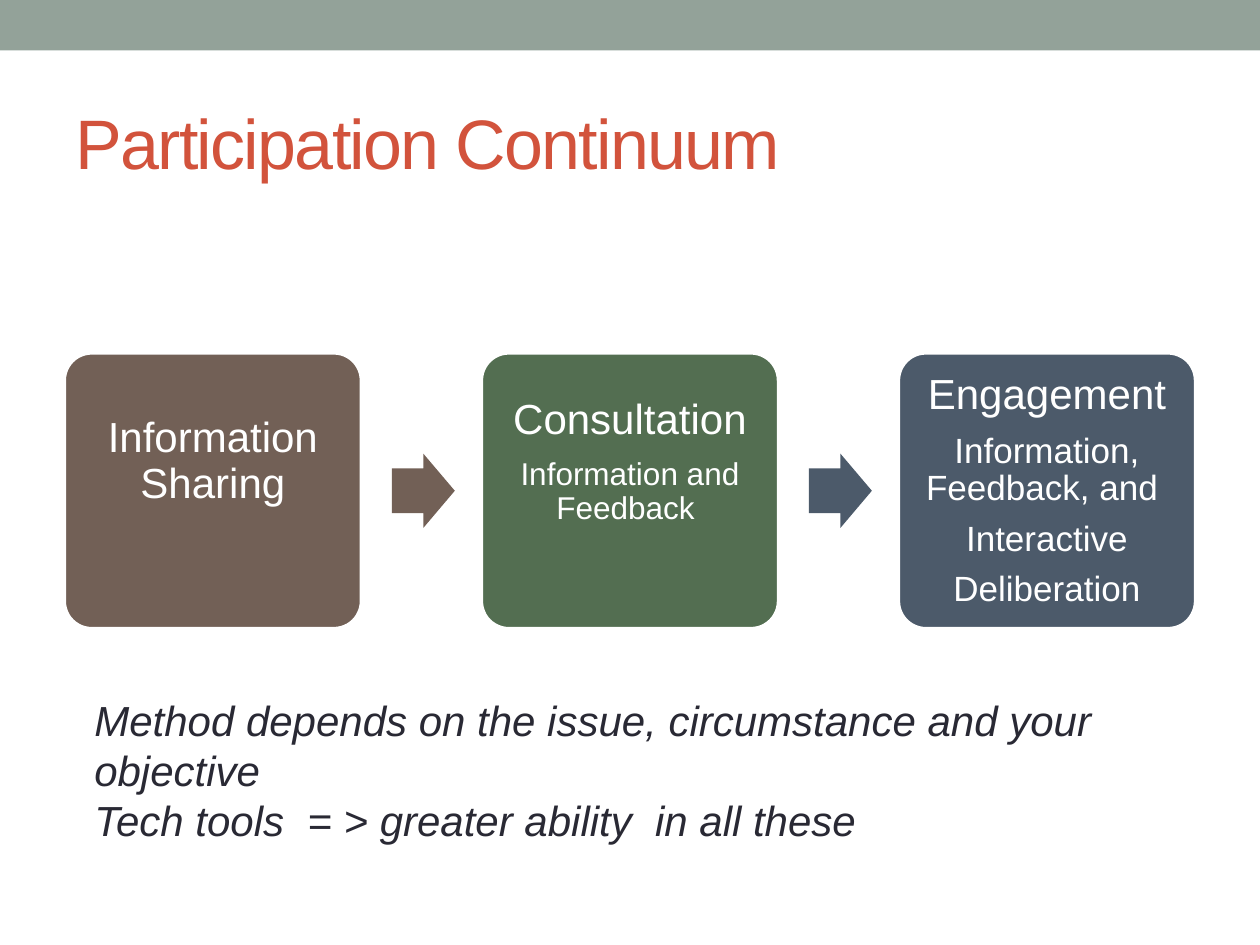
from pptx import Presentation
from pptx.dml.color import RGBColor
from pptx.enum.shapes import MSO_SHAPE
from pptx.enum.text import MSO_ANCHOR, MSO_AUTO_SIZE, PP_ALIGN
from pptx.util import Inches, Pt

RECT, BOX, ARROW = MSO_SHAPE.RECTANGLE, MSO_SHAPE.ROUNDED_RECTANGLE, MSO_SHAPE.RIGHT_ARROW
MIDDLE, LEFT, CENTER = MSO_ANCHOR.MIDDLE, PP_ALIGN.LEFT, PP_ALIGN.CENTER
FONT = "Arial"
COLORS = {"band": "93A299", "title": "D2533C", "text": "292934", "white": "FFFFFF",
          "brown": "726056", "green": "536E51", "blue": "4C5A6A"}

# Content
TITLE = "Participation Continuum"
# colour, bottom inset, lines of (text, size)
STEPS = [
    ("brown", 0.56, [("Information Sharing", 24)]),
    ("green", 0.56, [("Consultation", 24), ("Information and Feedback ", 18)]),
    ("blue", 0.1, [("Engagement", 24), ("Information, Feedback, and ", 20),
                   ("Interactive", 20), ("Deliberation", 20)]),
]
ARROW_COLORS = ["brown", "blue"]
NOTES = ["Method depends on the issue, circumstance and your objective",
         "Tech tools  = > greater ability  in all these"]

# Layout in inches
BOX_LEFT, BOX_TOP, BOX_W, BOX_H, PITCH = 0.51, 2.8, 2.36, 2.19, 3.31
ARROW_OFFSET, ARROW_W, ARROW_H = 2.6, 0.5, 0.59


def rgb(name):
    return RGBColor.from_string(COLORS[name])


def add_block(s, kind, x, y, w, h, color):
    sp = s.shapes.add_shape(kind, Inches(x), Inches(y), Inches(w), Inches(h))
    sp.shadow.inherit = False
    sp.fill.solid()
    sp.fill.fore_color.rgb = rgb(color)
    sp.line.fill.background()
    return sp


def add_lines(tf, lines, color, align):
    for i, (text, size) in enumerate(lines):
        p = tf.add_paragraph() if i else tf.paragraphs[0]
        p.text = text
        p.alignment = align
        p.font.name, p.font.size = FONT, Pt(size)
        p.font.color.rgb = rgb(color)


prs = Presentation()
prs.slide_width, prs.slide_height = Inches(10), Inches(7.5)
s = prs.slides.add_slide(prs.slide_layouts[5])

# Top band and title
add_block(s, RECT, 0, 0, 10, 0.4, "band")
title = s.shapes.title
title.left, title.top = Inches(0.5), Inches(0.58)
title.width, title.height = Inches(9), Inches(1.08)
tf = title.text_frame
tf.auto_size, tf.vertical_anchor = MSO_AUTO_SIZE.NONE, MIDDLE
add_lines(tf, [(TITLE, 40)], "title", LEFT)
tf.paragraphs[0].runs[0].font._element.set("spc", "-100")

# Steps of the continuum
for i, (color, bottom, lines) in enumerate(STEPS):
    sp = add_block(s, BOX, BOX_LEFT + i * PITCH, BOX_TOP, BOX_W, BOX_H, color)
    sp.adjustments[0] = 0.1
    sp.line.color.rgb = rgb("white")
    sp.line.width = Pt(2.08)
    tf = sp.text_frame
    tf.word_wrap, tf.vertical_anchor = True, MIDDLE
    tf.margin_left = tf.margin_right = tf.margin_top = Inches(0.1)
    tf.margin_bottom = Inches(bottom)
    add_lines(tf, lines, "white", CENTER)
    for p in tf.paragraphs:
        p.line_spacing = 0.9
        p.space_after = Pt(0.35 * p.font.size.pt)

# Arrows between the steps
for i, color in enumerate(ARROW_COLORS):
    sp = add_block(s, ARROW, BOX_LEFT + ARROW_OFFSET + i * PITCH,
                   BOX_TOP + (BOX_H - ARROW_H) / 2, ARROW_W, ARROW_H, color)
    sp.adjustments[0], sp.adjustments[1] = 0.6, 0.5

# Closing remarks
tf = s.shapes.add_textbox(Inches(0.65), Inches(5.46), Inches(8.92), Inches(1.31)).text_frame
tf.word_wrap = True
add_lines(tf, [(text, 24) for text in NOTES], "text", LEFT)
for p in tf.paragraphs:
    p.font.italic = True

prs.save("out.pptx")
